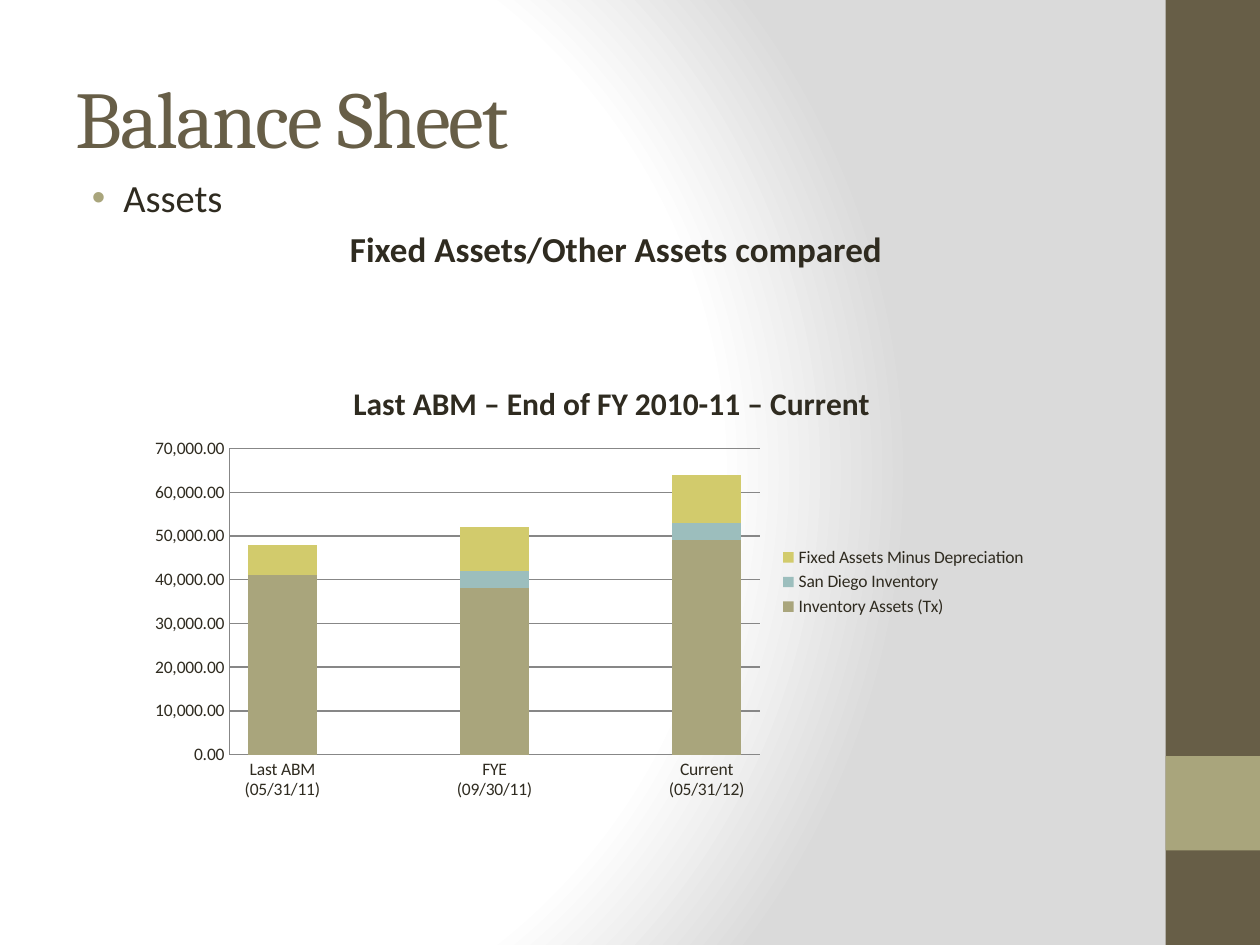
import pptx
import pptx.chart.data
import pptx.dml.color
import pptx.enum.chart
import pptx.enum.shapes
import pptx.enum.text
import pptx.oxml
import pptx.oxml.ns
import pptx.util

WIDTH, HEIGHT = 10, 7.5
BAND = 0.75
CHART_WIDTH, CHART_HEIGHT = 7.17, 3.58
COLORS = {
    "brown": "675E47",
    "olive": "A9A57C",
    "teal": "9CBEBD",
    "yellow": "D2CB6C",
    "text": "2F2B20",
    "grid": "878787",
    "white": "FFFFFF",
    "gray": "DADADA",
}
CATEGORIES = ["Last ABM (05/31/11)", "", "FYE (09/30/11)", "", "Current (05/31/12)"]
SERIES = [
    ("Inventory Assets (Tx)", [41000, None, 38000, None, 49000], "olive"),
    ("San Diego Inventory", [None, None, 4000, None, 4000], "teal"),
    ("Fixed Assets Minus Depreciation", [7000, None, 10000, None, 11000], "yellow"),
]


def rgb(name):
    return pptx.dml.color.RGBColor.from_string(COLORS[name])


def xml(text, *prefixes):
    """Parse one element, declaring its prefixes inside the first tag."""
    declarations = pptx.oxml.ns.nsdecls(*prefixes)
    return pptx.oxml.parse_xml(text.replace(">", f" {declarations}>", 1))


def place(shape, left, top, width, height):
    shape.left, shape.top, shape.width, shape.height = (
        pptx.util.Inches(value) for value in (left, top, width, height)
    )


def format_font(font, size, color="text", name="Calibri", bold=False):
    font.size = pptx.util.Pt(size)
    font.name = name
    font.bold = bold
    font.color.rgb = rgb(color)


def add_run(paragraph, text, size, **style):
    run = paragraph.add_run()
    run.text = text
    format_font(run.font, size, **style)
    return run


def set_background(slide):
    slide.background.fill.gradient()
    stops = "".join(
        f'<a:gs pos="{share * 1000}"><a:srgbClr val="{COLORS[name]}"/></a:gs>'
        for share, name in ((0, "white"), (75, "white"), (100, "gray"))
    )
    gradient = xml(
        f'<a:gradFill rotWithShape="1"><a:gsLst>{stops}</a:gsLst><a:path path="circle">'
        '<a:fillToRect l="20000" t="50000" r="100000" b="50000"/></a:path></a:gradFill>',
        "a",
    )
    old = slide.element.xpath(".//p:bgPr/a:gradFill")[0]
    old.getparent().replace(old, gradient)


def add_band(slide, top, height, color):
    band = slide.shapes.add_shape(pptx.enum.shapes.MSO_SHAPE.RECTANGLE, 0, 0, 0, 0)
    place(band, WIDTH - BAND, top, BAND, height)
    band.shadow.inherit = False
    band.fill.solid()
    band.fill.fore_color.rgb = rgb(color)
    band.line.fill.background()


def fill_title(title):
    place(title, 0.5, 0.3, 8.33, 1.25)
    title.text_frame.vertical_anchor = pptx.enum.text.MSO_ANCHOR.MIDDLE
    paragraph = title.text_frame.paragraphs[0]
    paragraph.alignment = pptx.enum.text.PP_ALIGN.LEFT
    run = add_run(paragraph, "Balance Sheet", 46, color="brown", name="Cambria")
    run.font._element.set("spc", "-100")


def set_indent(paragraph, margin, indent, *bullet):
    properties = paragraph._p.get_or_add_pPr()
    properties.set("marL", str(pptx.util.Inches(margin)))
    properties.set("indent", str(pptx.util.Inches(indent)))
    properties.append(xml('<a:spcBef><a:spcPct val="20000"/></a:spcBef>', "a"))
    for element in bullet:
        properties.append(xml(element, "a"))


def fill_body(body):
    place(body, 0.5, 1.33, 8.33, 5.67)
    item = body.text_frame.paragraphs[0]
    set_indent(
        item, 0.38, -0.25,
        f'<a:buClr><a:srgbClr val="{COLORS["olive"]}"/></a:buClr>',
        '<a:buFont typeface="Arial"></a:buFont>',
        '<a:buChar char="•"></a:buChar>',
    )
    add_run(item, "Assets", 22)
    heading = body.text_frame.add_paragraph()
    heading.level = 1
    heading.alignment = pptx.enum.text.PP_ALIGN.CENTER
    set_indent(heading, 0.45, 0, "<a:buNone></a:buNone>")
    add_run(heading, "Fixed Assets/Other Assets compared", 20, bold=True)


def format_line(line):
    line.color.rgb = rgb("grid")
    line.width = pptx.util.Pt(0.75)


def format_axis(axis):
    axis.major_tick_mark = axis.minor_tick_mark = pptx.enum.chart.XL_TICK_MARK.NONE
    format_line(axis.format.line)


def manual_layout(left, top, size=None):
    """Layout element for a chart part, from lengths in inches."""
    shares = [("x", left / CHART_WIDTH), ("y", top / CHART_HEIGHT)]
    target = ""
    if size:
        target = '<c:layoutTarget val="inner"/>'
        shares += [("w", size[0] / CHART_WIDTH), ("h", size[1] / CHART_HEIGHT)]
    values = "".join(f'<c:{tag} val="{share:.4f}"/>' for tag, share in shares)
    return xml(
        f'<c:layout><c:manualLayout>{target}<c:xMode val="edge"/>'
        f'<c:yMode val="edge"/>{values}</c:manualLayout></c:layout>',
        "c",
    )


def set_layout(part, layout):
    for old in part.xpath("./c:layout"):
        part.remove(old)
    texts = part.xpath("./c:tx")
    part.insert(len(texts), layout)


def add_assets_chart(slide):
    data = pptx.chart.data.CategoryChartData(number_format="#,##0.00")
    data.categories = CATEGORIES
    for name, values, _ in SERIES:
        data.add_series(name, values)
    frame = slide.shapes.add_chart(
        pptx.enum.chart.XL_CHART_TYPE.COLUMN_STACKED, 0, 0, 0, 0, data
    )
    place(frame, 1.08, 2.83, CHART_WIDTH, CHART_HEIGHT)
    chart = frame.chart
    format_font(chart.font, 10)
    chart.has_title = True
    add_run(
        chart.chart_title.text_frame.paragraphs[0],
        "Last ABM – End of FY 2010-11 – Current ", 18, bold=True,
    )
    chart.has_legend = True
    chart.legend.position = pptx.enum.chart.XL_LEGEND_POSITION.RIGHT
    chart.legend.include_in_layout = False
    plot = chart.plots[0]
    plot.gap_width, plot.overlap, plot.vary_by_categories = 55, 100, False
    for series, (_, _, color) in zip(plot.series, SERIES):
        series.format.fill.solid()
        series.format.fill.fore_color.rgb = rgb(color)
    format_axis(chart.category_axis)
    axis = chart.value_axis
    format_axis(axis)
    axis.minimum_scale, axis.maximum_scale, axis.major_unit = 0, 70000, 10000
    axis.has_major_gridlines = True
    format_line(axis.major_gridlines.format.line)
    axis.tick_labels.number_format = "#,##0.00"
    axis.tick_labels.number_format_is_linked = False
    set_layout(chart.chart_title._element, manual_layout(1.68, 0.15))
    set_layout(chart._chartSpace.chart.plotArea, manual_layout(0.74, 0.73, (4.21, 2.43)))


def main():
    presentation = pptx.Presentation()
    presentation.slide_width = pptx.util.Inches(WIDTH)
    presentation.slide_height = pptx.util.Inches(HEIGHT)
    slide = presentation.slides.add_slide(presentation.slide_layouts[1])
    set_background(slide)
    add_band(slide, 0, HEIGHT, "brown")
    add_band(slide, HEIGHT - 2 * BAND, BAND, "olive")
    fill_title(slide.shapes.title)
    fill_body(slide.placeholders[1])
    add_assets_chart(slide)
    presentation.save("out.pptx")


if __name__ == "__main__":
    main()
